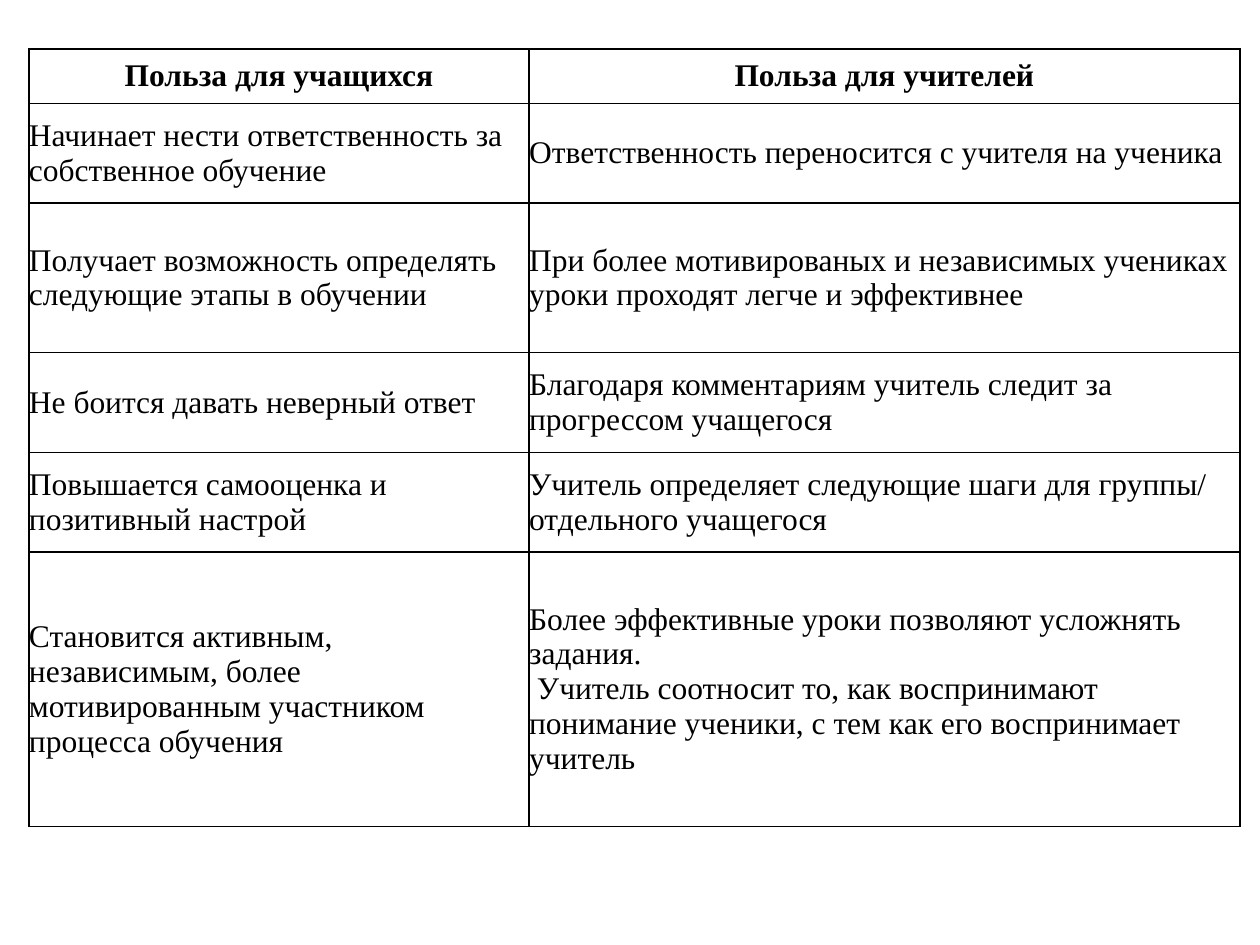
import pptx
import pptx.util
import pptx.dml.color
import pptx.enum.text
import pptx.oxml.ns
import lxml.etree

HEADERS = ("Польза для учащихся", "Польза для учителей")
BENEFITS = [
    ("Начинает нести ответственность за собственное обучение",
     "Ответственность переносится с учителя на ученика"),
    ("Получает возможность определять следующие этапы в обучении",
     "При более мотивированых и независимых учениках уроки проходят легче и эффективнее"),
    ("Не боится давать неверный ответ",
     "Благодаря комментариям учитель следит за прогрессом учащегося"),
    ("Повышается самооценка и позитивный настрой",
     "Учитель определяет следующие шаги для группы/ отдельного учащегося"),
    ("Становится активным, независимым, более мотивированным участником процесса обучения",
     "Более эффективные уроки позволяют усложнять задания.\n"
     " Учитель соотносит то, как воспринимают понимание ученики, с тем как его воспринимает учитель"),
]

THEME = {"font": "Times New Roman", "size": 18, "ink": "000000", "border": 1}
SLIDE = (10, 7.5)
LEFT, TOP = 0.23, 0.39
COLUMNS = (3.97, 5.64)
ROWS = (0.43, 0.79, 1.19, 0.79, 0.79, 2.18)

Inches, Pt = pptx.util.Inches, pptx.util.Pt
ALIGN = pptx.enum.text.PP_ALIGN
CELL_FORMAT = {
    "margin_left": 0, "margin_right": 0, "margin_top": 0, "margin_bottom": 0,
    "vertical_anchor": pptx.enum.text.MSO_ANCHOR.MIDDLE,
}


def set_borders(cell):
    tc_pr = cell._tc.get_or_add_tcPr()
    qn = pptx.oxml.ns.qn
    for i, side in enumerate(("a:lnL", "a:lnR", "a:lnT", "a:lnB")):
        ln = lxml.etree.Element(qn(side), w=str(Pt(THEME["border"])))
        fill = lxml.etree.SubElement(ln, qn("a:solidFill"))
        lxml.etree.SubElement(fill, qn("a:srgbClr"), val=THEME["ink"])
        tc_pr.insert(i, ln)  # borders must come before the cell's fill


def fill_cell(cell, text, is_header):
    for name, value in CELL_FORMAT.items():
        setattr(cell, name, value)
    cell.fill.background()
    set_borders(cell)
    cell.text_frame.text = text
    font_format = {"name": THEME["font"], "size": Pt(THEME["size"]), "bold": is_header}
    for p in cell.text_frame.paragraphs:
        p.alignment = ALIGN.CENTER if is_header else ALIGN.LEFT
        for r in p.runs:
            for name, value in font_format.items():
                setattr(r.font, name, value)
            r.font.color.rgb = pptx.dml.color.RGBColor.from_string(THEME["ink"])


def main():
    prs = pptx.Presentation()
    prs.slide_width, prs.slide_height = map(Inches, SLIDE)
    s = prs.slides.add_slide(prs.slide_layouts[6])
    table = s.shapes.add_table(
        len(ROWS), len(COLUMNS), Inches(LEFT), Inches(TOP),
        Inches(sum(COLUMNS)), Inches(sum(ROWS))).table
    table.horz_banding = False
    for column, width in zip(table.columns, COLUMNS):
        column.width = Inches(width)
    for i, (height, texts) in enumerate(zip(ROWS, [HEADERS, *BENEFITS])):
        table.rows[i].height = Inches(height)
        for j, text in enumerate(texts):
            fill_cell(table.cell(i, j), text, is_header=i == 0)
    prs.save("out.pptx")


if __name__ == "__main__":
    main()
